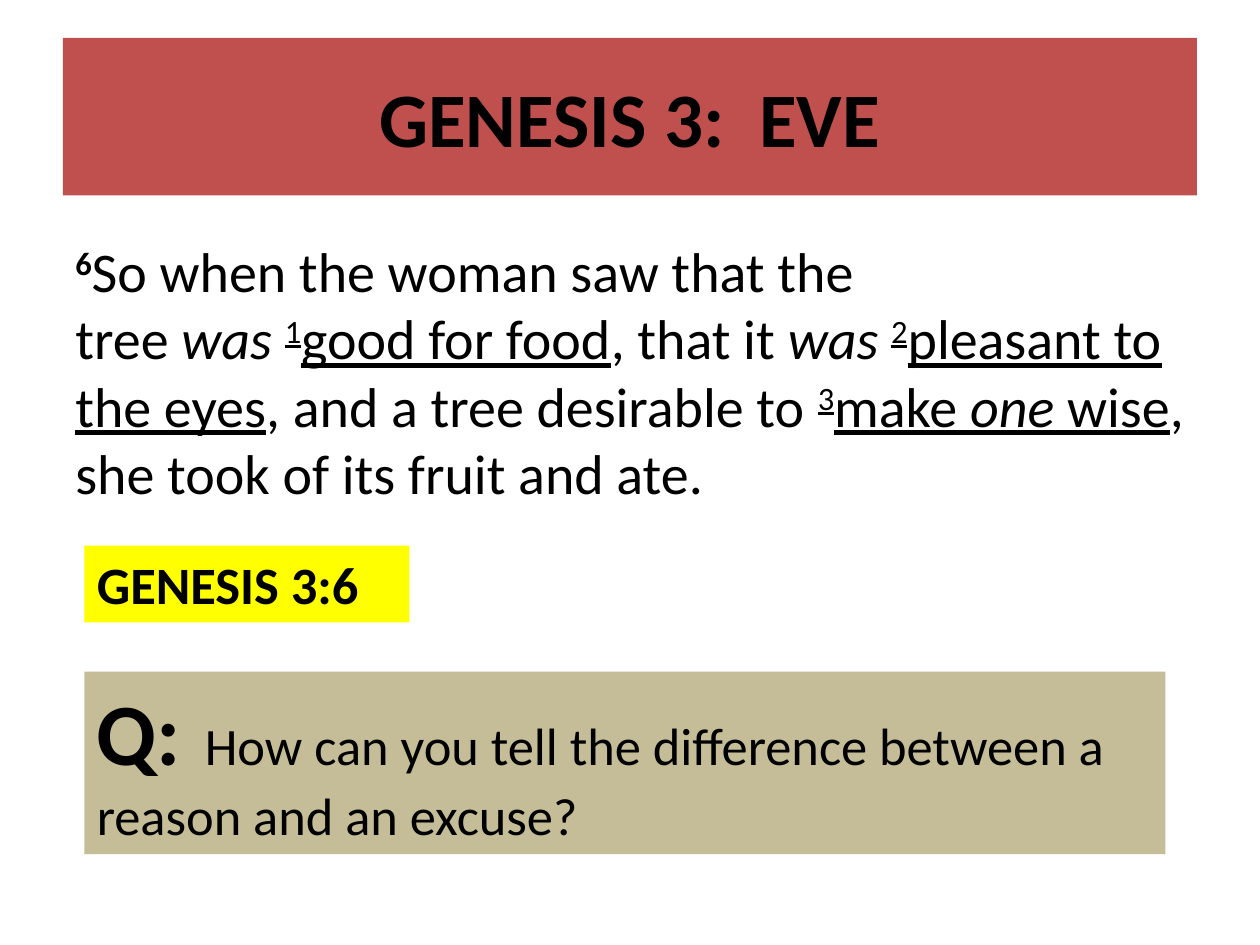
from pptx import Presentation
from pptx.dml.color import RGBColor
from pptx.enum.shapes import MSO_SHAPE
from pptx.enum.text import MSO_ANCHOR, PP_ALIGN
from pptx.util import Inches, Pt

THEME = {
    "font": "Calibri", "ink": "000000",
    "red": "C0504D", "yellow": "FFFF00", "tan": "C4BD97",
    "title": 44, "verse": 32, "label": 30, "mark": 50,
}
HARD = chr(160)  # no-break space, typed as ~ in the content

# Content: runs are (text, style), with b bold, i italic, u underline, s superscript
TITLE = [("GENESIS 3:  EVE", "b")]
VERSE = [
    ("6", "bs"), ("So when the woman~saw that the tree~", ""), ("was~", "i"),
    ("1", "us"), ("good for food", "u"), (", that it~", ""), ("was~", "i"),
    ("2", "us"), ("pleasant to the eyes", "u"),
    (", and a tree desirable to ", ""),
    ("3", "us"), ("make~", "u"), ("one", "iu"), ("~wise", "u"),
    (", she took of its fruit~and ate.", ""),
]
SOURCE = [("GENESIS 3:6", "b")]
QUERY = [
    ("Q:", "b", "mark"),
    ("  How can you tell the difference between a reason and an excuse?", ""),
]

# Parts: runs, box (left, top, width, height), fill, type size, align, anchor
LEFT, TOP = PP_ALIGN.LEFT, MSO_ANCHOR.TOP
PARTS = [
    (TITLE, (0.5, 0.3, 9, 1.25), "red", "title", PP_ALIGN.CENTER, MSO_ANCHOR.MIDDLE),
    (VERSE, (0.5, 1.83, 9, 2.26), None, "verse", LEFT, TOP),
    (SOURCE, (0.67, 4.33, 2.58, 0.61), "yellow", "label", LEFT, TOP),
    (QUERY, (0.67, 5.33, 8.58, 1.45), "tan", "label", LEFT, TOP),
]


def color(name):
    return RGBColor.from_string(THEME[name])


def add_box(slide, box, fill):
    place = [Inches(n) for n in box]
    if fill is None:
        return slide.shapes.add_textbox(*place)
    shape = slide.shapes.add_shape(MSO_SHAPE.RECTANGLE, *place)
    shape.shadow.inherit = False
    shape.fill.solid()
    shape.fill.fore_color.rgb = color(fill)
    shape.line.fill.background()
    return shape


def add_run(para, text, style, size=None):
    run = para.add_run()
    run.text = text.replace("~", HARD)
    run.font.bold = "b" in style
    run.font.italic = "i" in style
    run.font.underline = "u" in style
    if size:
        run.font.size = Pt(THEME[size])
    if "s" in style:
        run._r.get_or_add_rPr().set("baseline", "30000")


def write(frame, runs, size, align, anchor):
    frame.word_wrap = True
    frame.vertical_anchor = anchor
    para = frame.paragraphs[0]
    para.alignment = align
    para.font.name = THEME["font"]
    para.font.size = Pt(THEME[size])
    para.font.color.rgb = color("ink")
    for run in runs:
        add_run(para, *run)


def main():
    deck = Presentation()
    deck.slide_width, deck.slide_height = Inches(10), Inches(7.5)
    slide = deck.slides.add_slide(deck.slide_layouts[6])
    for runs, box, fill, size, align, anchor in PARTS:
        shape = add_box(slide, box, fill)
        write(shape.text_frame, runs, size, align, anchor)
    deck.save("out.pptx")


if __name__ == "__main__":
    main()
